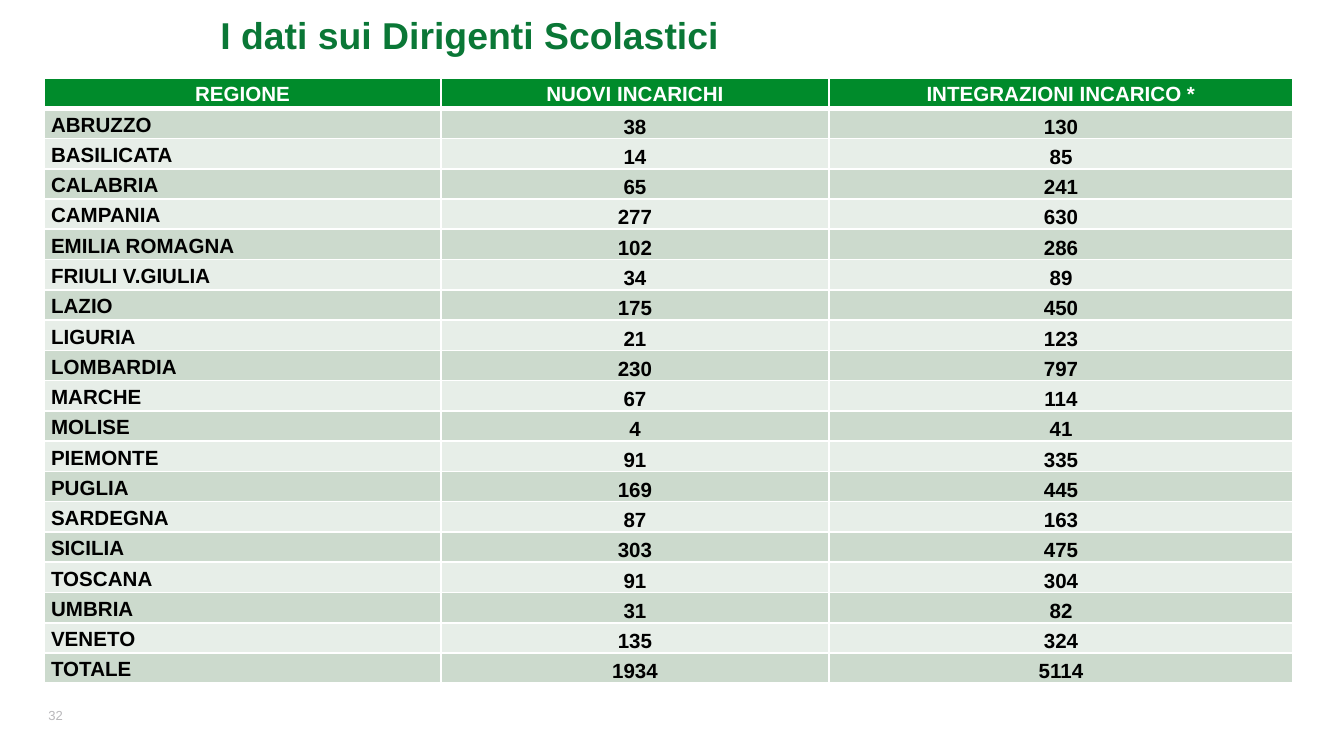
from lxml import etree
from pptx import Presentation
from pptx.dml.color import RGBColor
from pptx.enum import text
from pptx.oxml import ns
from pptx.util import Inches, Pt

WHITE = RGBColor(0xFF, 0xFF, 0xFF)
BLACK = RGBColor(0x00, 0x00, 0x00)
GREEN = RGBColor(0x00, 0x8B, 0x2B)
TITLE_GREEN = RGBColor(0x0A, 0x77, 0x36)
BAND_DARK = RGBColor(0xCC, 0xDA, 0xCD)
BAND_LIGHT = RGBColor(0xE7, 0xEE, 0xE8)
GREY = RGBColor(0xB9, 0xB8, 0xBB)

LEFT, CENTER = text.PP_ALIGN.LEFT, text.PP_ALIGN.CENTER
MIDDLE, BOTTOM = text.MSO_ANCHOR.MIDDLE, text.MSO_ANCHOR.BOTTOM

HEADER = ("REGIONE", "NUOVI INCARICHI", "INTEGRAZIONI INCARICO *")
REGIONS = [
    ("ABRUZZO", 38, 130),
    ("BASILICATA", 14, 85),
    ("CALABRIA", 65, 241),
    ("CAMPANIA", 277, 630),
    ("EMILIA ROMAGNA", 102, 286),
    ("FRIULI V.GIULIA", 34, 89),
    ("LAZIO", 175, 450),
    ("LIGURIA", 21, 123),
    ("LOMBARDIA", 230, 797),
    ("MARCHE", 67, 114),
    ("MOLISE", 4, 41),
    ("PIEMONTE", 91, 335),
    ("PUGLIA", 169, 445),
    ("SARDEGNA", 87, 163),
    ("SICILIA", 303, 475),
    ("TOSCANA", 91, 304),
    ("UMBRIA", 31, 82),
    ("VENETO", 135, 324),
    ("TOTALE", 1934, 5114),
]
COLUMN_WIDTHS = (2.95, 2.89, 3.45)


def set_attrs(obj, values):
    for name, value in values.items():
        setattr(obj, name, value)


def set_margins(obj, left, top, right, bottom):
    set_attrs(obj, {
        "margin_left": Inches(left), "margin_top": Inches(top),
        "margin_right": Inches(right), "margin_bottom": Inches(bottom),
    })


def write_text(tf, content, size, color, bold=False, align=LEFT, spacing=1.0):
    p = tf.paragraphs[0]
    set_attrs(p, {"alignment": align, "line_spacing": spacing})
    r = p.add_run()
    r.text = content
    set_attrs(r.font, {"name": "Arial", "size": Pt(size), "bold": bold})
    r.font.color.rgb = color


def add_title(s, content):
    sp = s.shapes.title
    set_attrs(sp, {"left": Inches(1.64), "top": Inches(0.02),
                   "width": Inches(7.83), "height": Inches(0.47)})
    tf = sp.text_frame
    set_attrs(tf, {"word_wrap": True, "vertical_anchor": MIDDLE,
                   "auto_size": text.MSO_AUTO_SIZE.NONE})
    set_margins(tf, 0, 0, 0, 0)
    write_text(tf, content, 20, TITLE_GREEN, bold=True)


def add_page_number(s, number):
    sp = s.shapes.add_textbox(Inches(0.36), Inches(5.24), Inches(0.35), Inches(0.16))
    tf = sp.text_frame
    set_attrs(tf, {"word_wrap": False, "vertical_anchor": MIDDLE})
    set_margins(tf, 0, 0.05, 0.1, 0.05)
    write_text(tf, number, 7, GREY)


def set_borders(cell, bottom_width):
    tcPr = cell._tc.get_or_add_tcPr()
    for side, width in (("L", 1), ("R", 1), ("T", 1), ("B", bottom_width)):
        ln = etree.SubElement(tcPr, ns.qn(f"a:ln{side}"), w=str(Pt(width)))
        fill = etree.SubElement(ln, ns.qn("a:solidFill"))
        etree.SubElement(fill, ns.qn("a:srgbClr"), val=str(WHITE))


def fill_cell(cell, content, fill, color, align, anchor, bottom_width=1):
    set_borders(cell, bottom_width)
    cell.fill.solid()
    cell.fill.fore_color.rgb = fill
    cell.vertical_anchor = anchor
    set_margins(cell, 0.05, 0, 0.05, 0)
    write_text(cell.text_frame, content, 11, color, True, align, 1.15)


def add_region_table(s):
    table = s.shapes.add_table(
        len(REGIONS) + 1, len(HEADER), Inches(0.33), Inches(0.58),
        Inches(sum(COLUMN_WIDTHS)), Inches(4.51)).table
    for column, width in zip(table.columns, COLUMN_WIDTHS):
        column.width = Inches(width)
    for j, label in enumerate(HEADER):
        fill_cell(table.cell(0, j), label, GREEN, WHITE, CENTER, MIDDLE, 3)
    for i, row in enumerate(REGIONS, 1):
        band = BAND_DARK if i % 2 else BAND_LIGHT
        for j, value in enumerate(row):
            align, anchor = (CENTER, BOTTOM) if j else (LEFT, MIDDLE)
            fill_cell(table.cell(i, j), str(value), band, BLACK, align, anchor)


def main():
    prs = Presentation()
    width = Inches(10)
    set_attrs(prs, {"slide_width": width, "slide_height": width * 9 // 16})
    s = prs.slides.add_slide(prs.slide_layouts[5])
    add_page_number(s, "32")
    add_region_table(s)
    add_title(s, "I dati sui Dirigenti Scolastici")
    prs.save("out.pptx")


if __name__ == "__main__":
    main()
